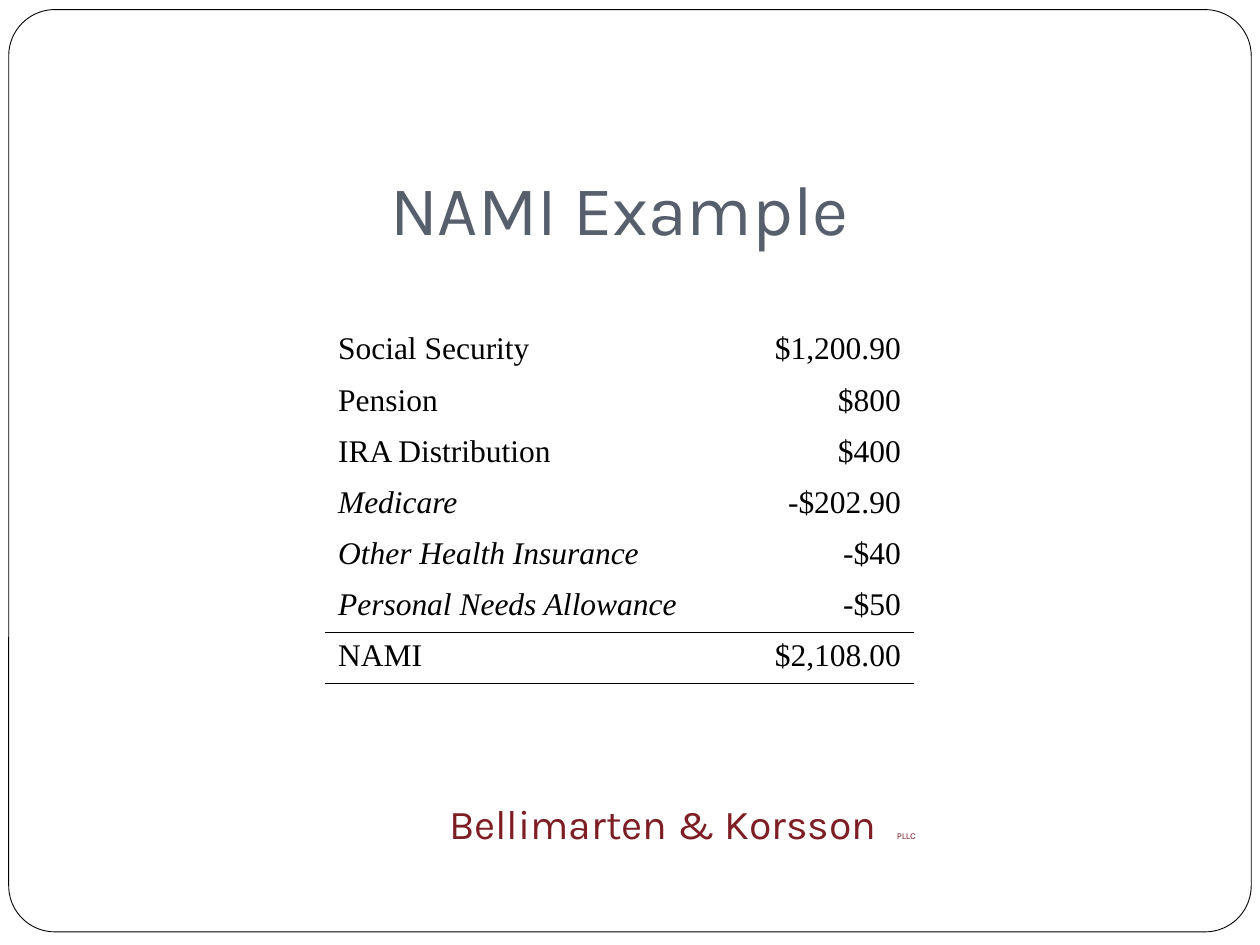
from dataclasses import dataclass

from pptx import Presentation
from pptx.dml.color import RGBColor
from pptx.enum.shapes import MSO_SHAPE as SHAPE
from pptx.enum.text import MSO_ANCHOR as ANCHOR, PP_ALIGN as ALIGN
from pptx.oxml.ns import qn
from pptx.util import Pt
from lxml.etree import SubElement

BLACK, WHITE, SLATE, MAROON = "000000", "FFFFFF", "575F6D", "7D1D24"
ROW_H = 29.25


@dataclass
class Row:
    label: str = ""
    amount: str = ""
    italic: bool = False
    borders: tuple = ()


ROWS = [
    Row("Social Security", "$1,200.90"),
    Row("Pension", "$800"),
    Row("IRA Distribution", "$400"),
    Row("Medicare", "-$202.90", True),
    Row("Other Health Insurance", "-$40", True),
    Row("Personal Needs Allowance", "-$50", True, ("B",)),
    Row("NAMI", "$2,108.00", False, ("T", "B")),
    Row(borders=("T",)),
]


def rgb(value: str) -> RGBColor:
    return RGBColor.from_string(value)


def style(font, name: str, size: float, color: str) -> None:
    font.name, font.size = name, Pt(size)
    font.color.rgb = rgb(color)


def set_frame(tf, bottom: float) -> None:
    tf.word_wrap = True
    tf.vertical_anchor = ANCHOR.BOTTOM
    tf.margin_left = tf.margin_right = Pt(7.2)
    tf.margin_top, tf.margin_bottom = Pt(3.6), Pt(bottom)


def add_border(cell, side: str) -> None:
    ln = SubElement(cell._tc.get_or_add_tcPr(), qn(f"a:ln{side}"), w=str(Pt(1)))
    SubElement(SubElement(ln, qn("a:solidFill")), qn("a:srgbClr"), val=BLACK)


def fill_cell(cell, text: str, align, italic: bool, borders: tuple) -> None:
    for side in borders:
        add_border(cell, side)
    cell.fill.background()
    p = cell.text_frame.paragraphs[0]
    p.text = text
    p.alignment = align
    style(p.font, "Times New Roman", 18, BLACK)
    for r in p.runs:
        style(r.font, "Times New Roman", 18, BLACK)
        r.font.italic = italic


def add_frame(s) -> None:
    sp = s.shapes.add_shape(SHAPE.ROUNDED_RECTANGLE, Pt(5), Pt(5.5), Pt(710), Pt(527))
    sp.adjustments[0] = 0.05
    sp.shadow.inherit = False
    sp.fill.solid()
    sp.fill.fore_color.rgb = rgb(WHITE)
    sp.line.color.rgb = rgb(BLACK)
    sp.line.width = Pt(0.5)
    s.shapes._spTree.insert(2, sp._element)


def add_title(s) -> None:
    sp = s.shapes.title
    sp.left, sp.top, sp.width, sp.height = Pt(48), Pt(60), Pt(612), Pt(90)
    tf = sp.text_frame
    tf.text = "NAMI Example"
    set_frame(tf, 7.2)
    p = tf.paragraphs[0]
    p.alignment = ALIGN.CENTER
    style(p.runs[0].font, "Karla", 40, SLATE)


def add_income_table(s) -> None:
    gf = s.shapes.add_table(len(ROWS), 2, Pt(186), Pt(186), Pt(336), Pt(ROW_H * len(ROWS)))
    table = gf.table
    table.first_row = table.horz_banding = False
    for column, width in zip(table.columns, (240, 96)):
        column.width = Pt(width)
    for i, row in enumerate(ROWS):
        table.rows[i].height = Pt(ROW_H)
        fill_cell(table.cell(i, 0), row.label, ALIGN.LEFT, row.italic, row.borders)
        fill_cell(table.cell(i, 1), row.amount, ALIGN.RIGHT, False, row.borders)


def add_firm_name(s) -> None:
    tf = s.shapes.add_textbox(Pt(84), Pt(456), Pt(612), Pt(51)).text_frame
    set_frame(tf, 22.4)
    p = tf.paragraphs[0]
    p.alignment = ALIGN.CENTER
    for text, size in (("Bellimarten & Korsson", 23.4), (" ", 23.4), ("PLLC", 5.2)):
        r = p.add_run()
        r.text = text
        style(r.font, "Karla", size, MAROON)
    p.runs[1].font._element.set("spc", "600")


def main() -> None:
    prs = Presentation()
    prs.slide_width, prs.slide_height = Pt(720), Pt(540)
    s = prs.slides.add_slide(prs.slide_layouts[5])
    add_frame(s)
    add_title(s)
    add_income_table(s)
    add_firm_name(s)
    prs.save("out.pptx")


if __name__ == "__main__":
    main()
